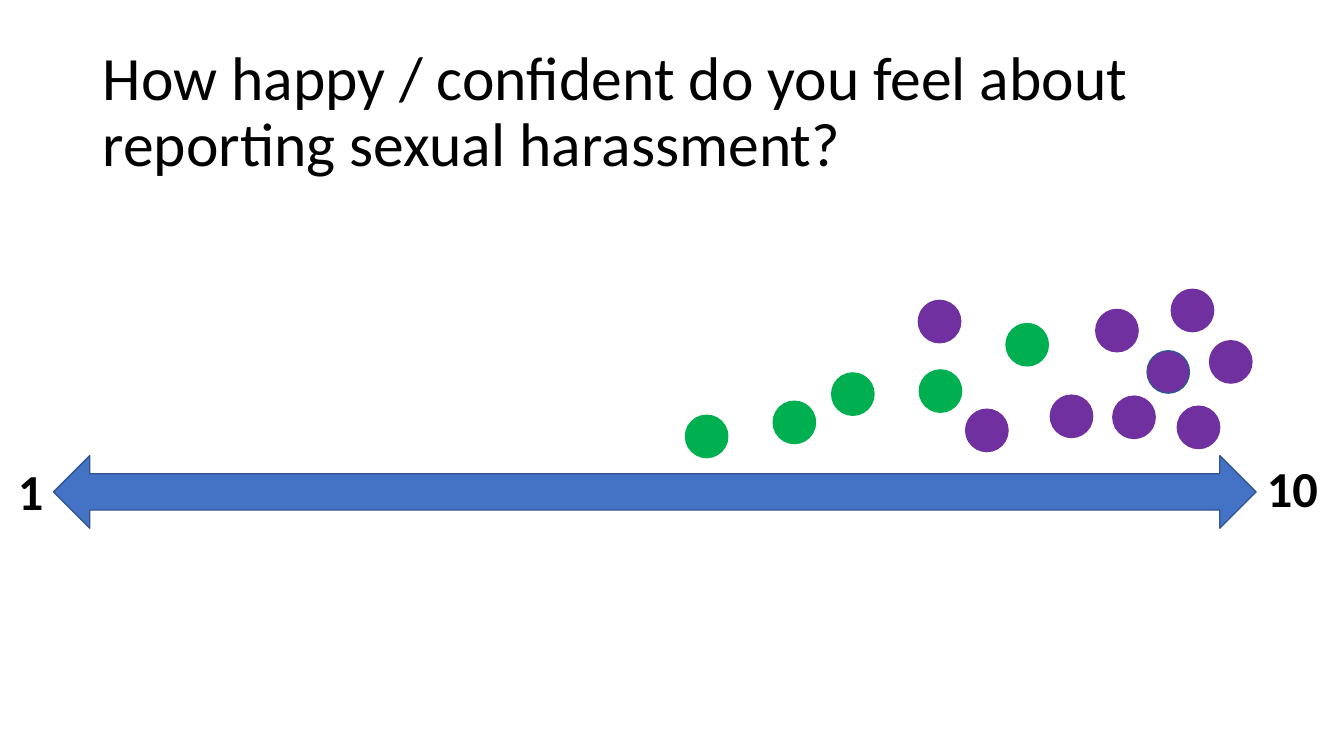
from dataclasses import dataclass

from pptx import Presentation
from pptx.dml.color import RGBColor
from pptx.enum.shapes import MSO_SHAPE
from pptx.enum.text import MSO_ANCHOR, MSO_AUTO_SIZE
from pptx.util import Inches, Pt

ARROW = MSO_SHAPE.LEFT_RIGHT_ARROW
ELLIPSE = MSO_SHAPE.OVAL
MIDDLE = MSO_ANCHOR.MIDDLE
TOP = MSO_ANCHOR.TOP
GROW = MSO_AUTO_SIZE.SHAPE_TO_FIT_TEXT
FIXED = MSO_AUTO_SIZE.NONE

PAGE_WIDTH = Inches(13.333)
PAGE_HEIGHT = Inches(7.5)
FONT = "Calibri"
BLACK = "000000"
BLUE = "4472C4"
DARK_BLUE = "325491"
PURPLE = "7030A0"
GREEN = "00B050"


@dataclass(frozen=True)
class Area:
    """Percentages of the slide's width and height."""

    left: float
    top: float
    width: float
    height: float

    def lengths(self) -> tuple[int, int, int, int]:
        return (
            round(PAGE_WIDTH * self.left / 100),
            round(PAGE_HEIGHT * self.top / 100),
            round(PAGE_WIDTH * self.width / 100),
            round(PAGE_HEIGHT * self.height / 100),
        )


@dataclass(frozen=True)
class Vote:
    left: float
    top: float
    fill: str
    outline: str = ""

    def area(self) -> Area:
        return Area(self.left, self.top, 3.15, 5.6)


@dataclass(frozen=True)
class Label:
    area: Area
    text: str
    size: int
    bold: bool = False
    wrap: bool = False
    anchor: MSO_ANCHOR = TOP
    line_spacing: float = 1.0


TITLE = Label(
    Area(6.9, 5.33, 86.25, 19.33),
    "How happy / confident do you feel about reporting sexual harassment?",
    44,
    wrap=True,
    anchor=MIDDLE,
    line_spacing=0.9,
)
SCALE = Area(3.98, 60.27, 89.48, 9.6)
SCALE_ENDS = [
    Label(Area(93.53, 59.87, 5.33, 9.47), "10", 36, bold=True),
    Label(Area(0.6, 60.27, 3.45, 9.47), "1", 36, bold=True),
]
VOTES = [
    Vote(78.15, 52.27, PURPLE),
    Vote(57.53, 53.07, GREEN),
    Vote(81.53, 40.93, PURPLE),
    Vote(82.8, 52.4, PURPLE),
    Vote(71.85, 54.13, PURPLE),
    Vote(87.6, 53.73, PURPLE),
    Vote(85.35, 46.4, PURPLE, DARK_BLUE),
    Vote(90, 45.07, PURPLE),
    Vote(87.15, 38.27, PURPLE),
    Vote(61.88, 49.33, GREEN),
    Vote(68.4, 48.93, GREEN),
    Vote(74.85, 42.8, GREEN),
    Vote(51, 54.93, GREEN),
    Vote(68.33, 39.73, PURPLE),
]


def colour(code: str) -> RGBColor:
    return RGBColor.from_string(code)


def draw_shape(page, kind: MSO_SHAPE, area: Area, fill: str, outline: str) -> None:
    shape = page.shapes.add_shape(kind, *area.lengths())
    shape.shadow.inherit = False
    shape.fill.solid()
    shape.fill.fore_color.rgb = colour(fill)
    shape.line.color.rgb = colour(outline)
    shape.line.width = Pt(1)


def draw_label(page, label: Label) -> None:
    box = page.shapes.add_textbox(*label.area.lengths())
    frame = box.text_frame
    frame.word_wrap = label.wrap
    frame.auto_size = FIXED if label.wrap else GROW
    frame.vertical_anchor = label.anchor
    para = frame.paragraphs[0]
    para.line_spacing = label.line_spacing
    span = para.add_run()
    span.text = label.text
    span.font.name = FONT
    span.font.size = Pt(label.size)
    span.font.bold = label.bold
    span.font.color.rgb = colour(BLACK)


def main() -> None:
    deck = Presentation()
    deck.slide_width = PAGE_WIDTH
    deck.slide_height = PAGE_HEIGHT
    page = deck.slides.add_slide(deck.slide_layouts[6])

    draw_label(page, TITLE)
    draw_shape(page, ARROW, SCALE, BLUE, DARK_BLUE)
    for vote in VOTES:
        draw_shape(page, ELLIPSE, vote.area(), vote.fill, vote.outline or vote.fill)
    for label in SCALE_ENDS:
        draw_label(page, label)

    deck.save("out.pptx")


if __name__ == "__main__":
    main()
